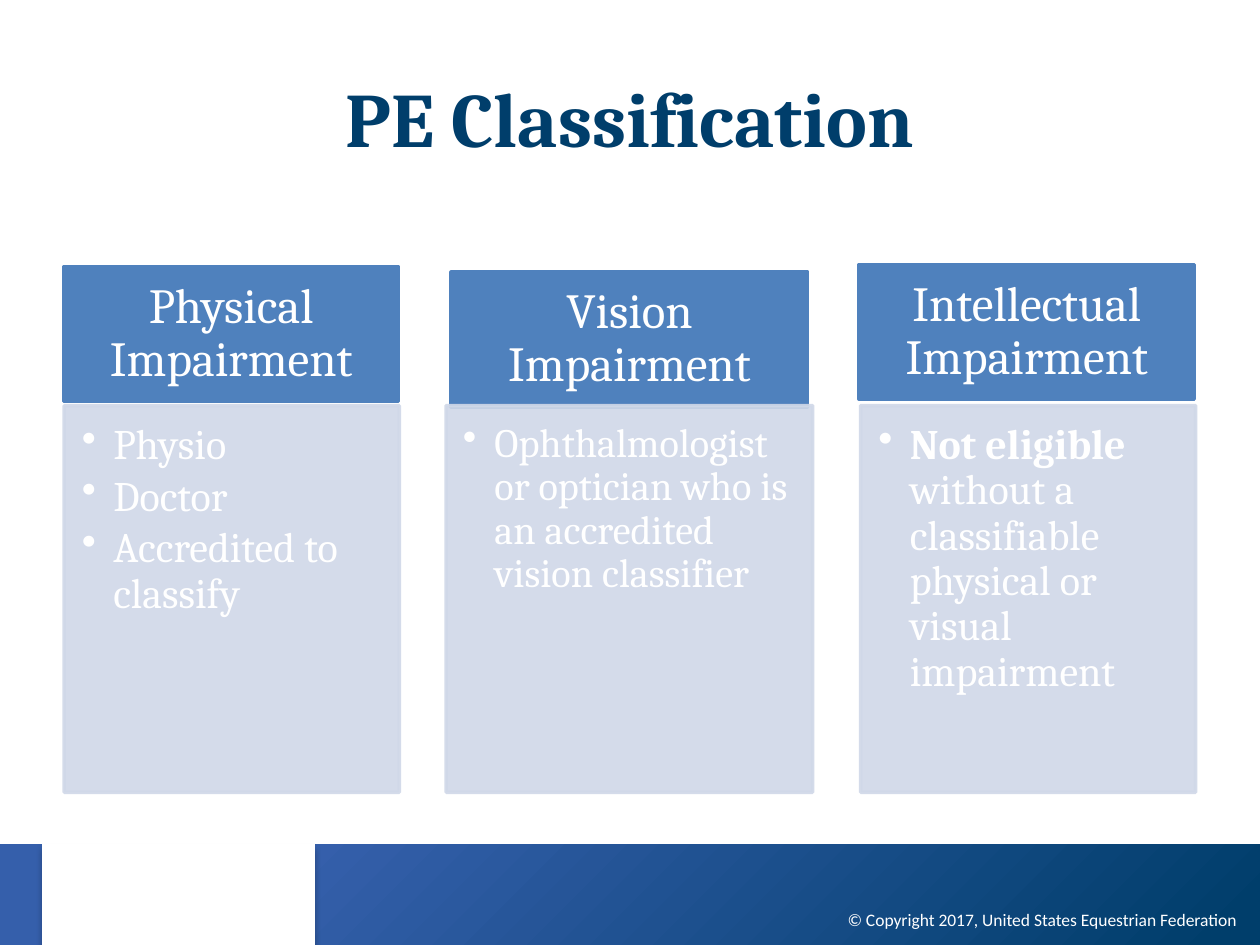
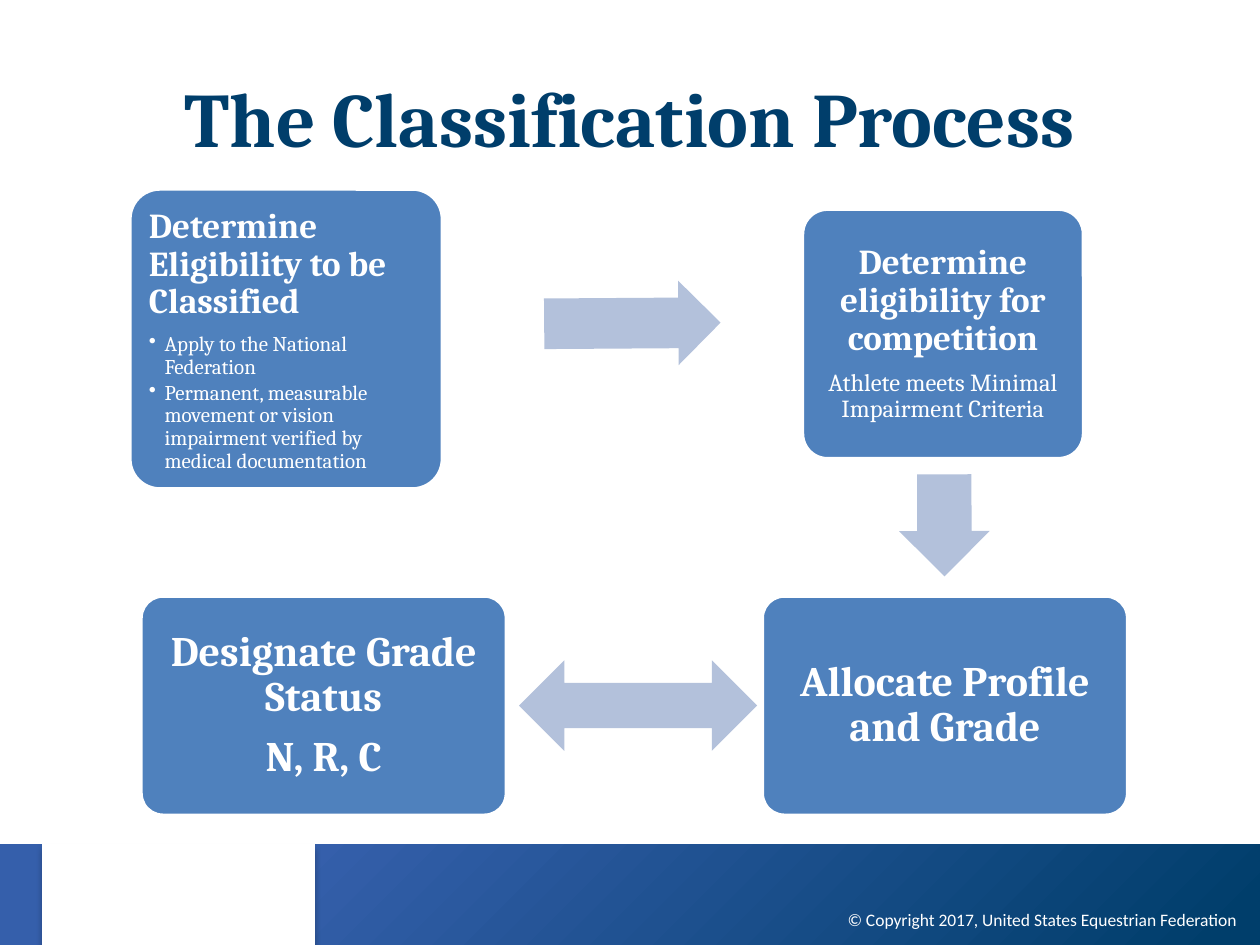
import pptx
import pptx.dml.color
import pptx.enum.shapes
import pptx.enum.text
import pptx.oxml
import pptx.oxml.ns
import pptx.util

NAVY = "003E6B"
ROYAL = "355FAB"
BLUE = "4F81BD"
PALE = "D0D8E8"
ARROW = "B3C1DB"
WHITE = "FFFFFF"

HEADING_FONT = "Cambria"
FOOTER_FONT = "Calibri"
FOOTER = "© Copyright 2017, United States Equestrian Federation"

SHAPES = pptx.enum.shapes.MSO_SHAPE
LEFT = pptx.enum.text.PP_ALIGN.LEFT
CENTER = pptx.enum.text.PP_ALIGN.CENTER
RIGHT = pptx.enum.text.PP_ALIGN.RIGHT
TOP = pptx.enum.text.MSO_ANCHOR.TOP
MIDDLE = pptx.enum.text.MSO_ANCHOR.MIDDLE

BAND_TOP = 482.4
BAND_HEIGHT = 57.6
PANEL_TOP = 231.8
GRADE_TOP = 340.6


def rgb(color):
    return pptx.dml.color.RGBColor.from_string(color)


def points(*values):
    return [pptx.util.Pt(value) for value in values]


def drawing_xml(markup):
    return pptx.oxml.parse_xml(markup.replace(
        ">", f" {pptx.oxml.ns.nsdecls('a')}>", 1))


def add_box(slide, preset, frame, fill, line=None, line_width=2):
    shape = slide.shapes.add_shape(preset, *points(*frame))
    shape.shadow.inherit = False
    shape.fill.solid()
    shape.fill.fore_color.rgb = rgb(fill)
    if line:
        shape.line.color.rgb = rgb(line)
        shape.line.width = pptx.util.Pt(line_width)
    else:
        shape.line.fill.background()
    return shape


def prepare_text(shape, anchor, margins):
    frame = shape.text_frame
    frame.word_wrap = True
    frame.vertical_anchor = anchor
    (frame.margin_left, frame.margin_top,
     frame.margin_right, frame.margin_bottom) = points(*margins)
    return frame


def format_runs(paragraph, size, bold=False, font=HEADING_FONT, color=WHITE):
    for run in paragraph.runs:
        run.font.size = pptx.util.Pt(size)
        run.font.bold = bold
        run.font.name = font
        run.font.color.rgb = rgb(color)


def add_bullet(paragraph, indent):
    properties = paragraph._p.get_or_add_pPr()
    properties.set("marL", str(pptx.util.Pt(indent)))
    properties.set("indent", str(pptx.util.Pt(-indent)))
    properties.append(drawing_xml('<a:buChar char="•"/>'.replace("/>", "></a:buChar>")))


def write_paragraph(frame, text, size, bold=False, align=CENTER, bullet_indent=0):
    first = frame.paragraphs[0]
    paragraph = frame.add_paragraph() if first.text else first
    paragraph.text = text
    if bullet_indent:
        add_bullet(paragraph, bullet_indent)
    paragraph.alignment = align
    paragraph.line_spacing = 0.9
    paragraph.space_after = pptx.util.Pt(size * (0.15 if bullet_indent else 0.35))
    format_runs(paragraph, size, bold)
    return paragraph


def make_translucent(shape, percent):
    for color in shape.element.iter(pptx.oxml.ns.qn("a:srgbClr")):
        color.append(drawing_xml(f'<a:alpha val="{percent * 1000}"></a:alpha>'))


def add_footer_band(slide):
    band = add_box(slide, SHAPES.RECTANGLE, (0, BAND_TOP, 720, BAND_HEIGHT), ROYAL)
    stops = "".join(
        f'<a:gs pos="{position * 1000}"><a:srgbClr val="{color}"/></a:gs>'
        for position, color in ((0, ROYAL), (23, ROYAL), (97, NAVY)))
    solid = band.element.spPr.find(pptx.oxml.ns.qn("a:solidFill"))
    band.element.spPr.replace(solid, drawing_xml(
        f'<a:gradFill rotWithShape="1"><a:gsLst>{stops}</a:gsLst><a:path path="circle">'
        '<a:fillToRect r="100000" b="100000"/></a:path></a:gradFill>'))
    patch = add_box(slide, SHAPES.RECTANGLE, (24, BAND_TOP, 156, BAND_HEIGHT), WHITE)
    effects = patch.element.spPr.find(pptx.oxml.ns.qn("a:effectLst"))
    effects.append(drawing_xml(
        '<a:outerShdw blurRad="50800" dist="38100" dir="5400000">'
        '<a:srgbClr val="000000"><a:alpha val="30000"/></a:srgbClr></a:outerShdw>'))
    return band, patch


def share_footer_band(slide):
    for shape in add_footer_band(slide):
        slide.slide_layout.shapes.element.append(shape.element)


def add_title_slide(presentation, title):
    slide = presentation.slides.add_slide(presentation.slide_layouts[5])
    shape = slide.shapes.title
    shape.left, shape.top, shape.width, shape.height = points(36, 21.6, 648, 90)
    shape.text_frame.text = title
    shape.text_frame.vertical_anchor = MIDDLE
    paragraph = shape.text_frame.paragraphs[0]
    paragraph.alignment = CENTER
    format_runs(paragraph, 44, True, color=NAVY)
    return slide


def add_copyright(slide):
    box = slide.shapes.add_textbox(*points(418.3, 511.2, 295.2, 28.8))
    frame = prepare_text(box, MIDDLE, (7.2, 3.6, 7.2, 3.6))
    frame.text = FOOTER
    frame.paragraphs[0].alignment = RIGHT
    format_runs(frame.paragraphs[0], 10, font=FOOTER_FONT)


def add_impairment_header(slide, text, left, top, width):
    header = add_box(slide, SHAPES.RECTANGLE, (left, top, width, 77), BLUE, BLUE)
    frame = prepare_text(header, MIDDLE, (15.8, 8.6, 15.8, 8.6))
    write_paragraph(frame, text, 28)


def add_impairment_panel(slide, items, left, width, size):
    panel = add_box(slide, SHAPES.RECTANGLE, (left, PANEL_TOP, width, 221), PALE, PALE)
    make_translucent(panel, 90)
    margins = [size * share for share in (0.42, 0.42, 0.57, 0.63)]
    frame = prepare_text(panel, TOP, margins)
    return [write_paragraph(frame, item, size, align=LEFT, bullet_indent=18)
            for item in items]


def add_step(slide, frame, margin, paragraphs, anchor=MIDDLE):
    step = add_box(slide, SHAPES.ROUNDED_RECTANGLE, frame, BLUE, WHITE)
    step.adjustments[0] = 0.1
    text_frame = prepare_text(step, anchor, [margin] * 4)
    for text, size, options in paragraphs:
        write_paragraph(text_frame, text, size, **options)


def add_arrow(slide, preset, frame, shaft=0.5, rotation=0):
    arrow = add_box(slide, preset, frame, ARROW)
    arrow.adjustments[0] = shaft
    arrow.adjustments[1] = 0.5
    arrow.rotation = rotation


def build_classification(presentation):
    slide = add_title_slide(presentation, "PE Classification")
    share_footer_band(slide)

    add_impairment_header(slide, "Physical Impairment", 36.4, 152.6, 191.5)
    add_impairment_panel(slide, ["Physio", "Doctor", "Accredited to classify"],
                         36.7, 191.5, 24)

    add_impairment_header(slide, "Vision Impairment", 257.8, 155.5, 203.8)
    add_impairment_panel(
        slide, ["Ophthalmologist or optician who is an accredited vision classifier"],
        254.9, 209.5, 23)

    add_impairment_header(slide, "Intellectual Impairment", 491, 151.2, 191.5)
    eligibility, = add_impairment_panel(slide, ["Not eligible "], 491.8, 191.5, 24)
    eligibility.add_run().text = "without a classifiable physical or visual impairment"
    format_runs(eligibility, 24)
    eligibility.runs[0].font.bold = True

    add_copyright(slide)


def build_process(presentation):
    slide = add_title_slide(presentation, "The Classification Process")
    bold = {"bold": True}
    bullet = {"align": LEFT, "bullet_indent": 9}

    add_step(slide, (74.2, 108, 178.6, 171.4), 5.8, [
        ("Determine Eligibility to be Classified", 20, {"bold": True, "align": LEFT}),
        ("Apply to the National Federation", 12, bullet),
        ("Permanent, measurable movement or vision impairment verified by "
         "medical documentation", 12, bullet),
    ], TOP)
    add_arrow(slide, SHAPES.RIGHT_ARROW, (311, 160.6, 100.8, 48.2), 0.6, 359.6)
    add_step(slide, (458.6, 119.5, 160.6, 142.6), 5.8, [
        ("Determine eligibility for competition", 20, bold),
        ("Athlete meets Minimal Impairment Criteria", 14, {}),
    ])
    add_arrow(slide, SHAPES.RIGHT_ARROW, (510.5, 274.3, 58.3, 51.8), 0.6, 89.8)
    add_step(slide, (435.6, GRADE_TOP, 208.8, 125.3), 7.2,
             [("Allocate Profile and Grade", 24, bold)])
    add_arrow(slide, SHAPES.LEFT_RIGHT_ARROW, (296.6, 377.3, 136.1, 51.8))
    add_step(slide, (80.6, GRADE_TOP, 208.8, 125.3), 7.2,
             [("Designate Grade Status", 24, bold), ("N, R, C", 24, bold)])

    add_copyright(slide)


def main():
    presentation = pptx.Presentation()
    presentation.slide_width, presentation.slide_height = points(720, 540)
    build_classification(presentation)
    build_process(presentation)
    presentation.save("out.pptx")


if __name__ == "__main__":
    main()
